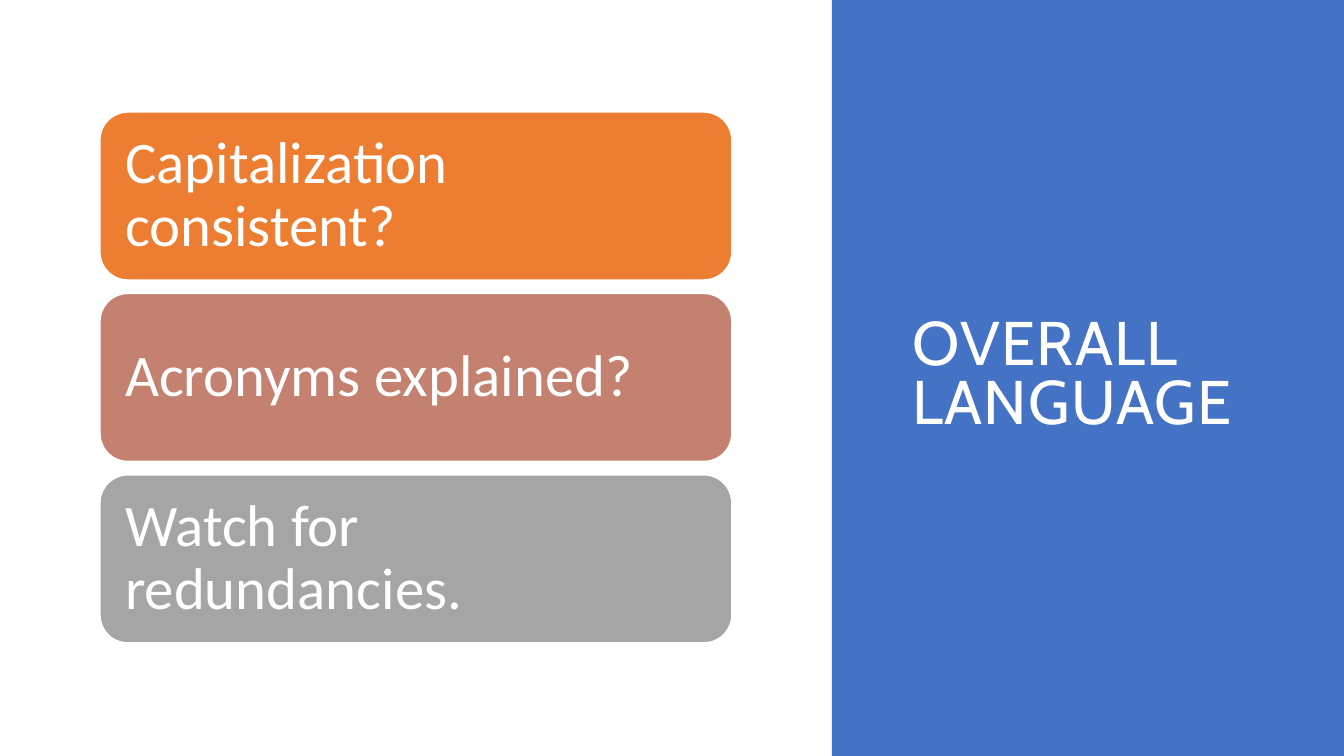
from dataclasses import dataclass

from pptx import Presentation
from pptx import util as u
from pptx.dml.color import RGBColor
from pptx.enum import shapes, text


@dataclass(frozen=True)
class Theme:
    """Colours, fonts and type sizes of the slide."""
    panel: str = "4472C4"
    light: str = "FFFFFF"
    cards: tuple = ("ED7D31", "C48170", "A5A5A5")
    title_font: str = "Cabin"
    body_font: str = "Calibri"
    title_size: int = 44
    body_size: int = 42


THEME = Theme()
WIDTH, HEIGHT = 13.33, 7.5
PANEL_LEFT = 8.25
CARD_LEFT, CARD_TOP = 0.99, 1.11
CARD_WIDTH, CARD_HEIGHT, CARD_PITCH = 6.27, 1.67, 1.8
QUESTIONS = ("Capitalization consistent?", "Acronyms explained?", "Watch for redundancies.")


def add_block(page, kind, place, fill, line=None):
    """Add a flat filled shape, outlined if a line colour is given."""
    block = page.shapes.add_shape(kind, *map(u.Inches, place))
    block.shadow.inherit = False
    block.fill.solid()
    block.fill.fore_color.rgb = RGBColor.from_string(fill)
    if line:
        block.line.color.rgb = RGBColor.from_string(line)
        block.line.width = u.Pt(1.25)
    else:
        block.line.fill.background()
    return block


def write(box, words, *, font, size, color, leading, after=0, inset=None, tracking=None):
    """Write left-aligned, vertically centred text into a box."""
    frame = box.text_frame
    frame.word_wrap = True
    frame.vertical_anchor = text.MSO_ANCHOR.MIDDLE
    if inset is not None:
        frame.margin_left = frame.margin_right = u.Inches(inset)
        frame.margin_top = frame.margin_bottom = u.Inches(inset)
    para = frame.paragraphs[0]
    para.alignment = text.PP_ALIGN.LEFT
    para.line_spacing = leading
    para.space_after = u.Pt(after)
    span = para.add_run()
    span.text = words
    span.font.name = font
    span.font.size = u.Pt(size)
    span.font.color.rgb = RGBColor.from_string(color)
    if tracking:
        span.font._element.set("spc", str(tracking * 100))


def add_title_panel(page, words):
    """Add the coloured side panel and its title."""
    add_block(page, shapes.MSO_SHAPE.RECTANGLE,
              (PANEL_LEFT, 0, WIDTH - PANEL_LEFT, HEIGHT), THEME.panel)
    box = page.shapes.add_textbox(*map(u.Inches, (8.95, 0.7, 3.74, 6.09)))
    write(box, words, font=THEME.title_font, size=THEME.title_size,
          color=THEME.light, leading=0.8, tracking=1)


def add_card(page, row, words, fill):
    """Add one rounded card in the given row."""
    place = (CARD_LEFT, CARD_TOP + row * CARD_PITCH, CARD_WIDTH, CARD_HEIGHT)
    card = add_block(page, shapes.MSO_SHAPE.ROUNDED_RECTANGLE, place, fill, line=THEME.light)
    write(card, words, font=THEME.body_font, size=THEME.body_size,
          color=THEME.light, leading=0.9, inset=0.17)


def main():
    """Build and save the slide."""
    deck = Presentation()
    deck.slide_width, deck.slide_height = u.Inches(WIDTH), u.Inches(HEIGHT)
    page = deck.slides.add_slide(deck.slide_layouts[6])
    add_title_panel(page, "OVERALL LANGUAGE")
    for row, (words, fill) in enumerate(zip(QUESTIONS, THEME.cards)):
        add_card(page, row, words, fill)
    deck.save("out.pptx")


if __name__ == "__main__":
    main()
